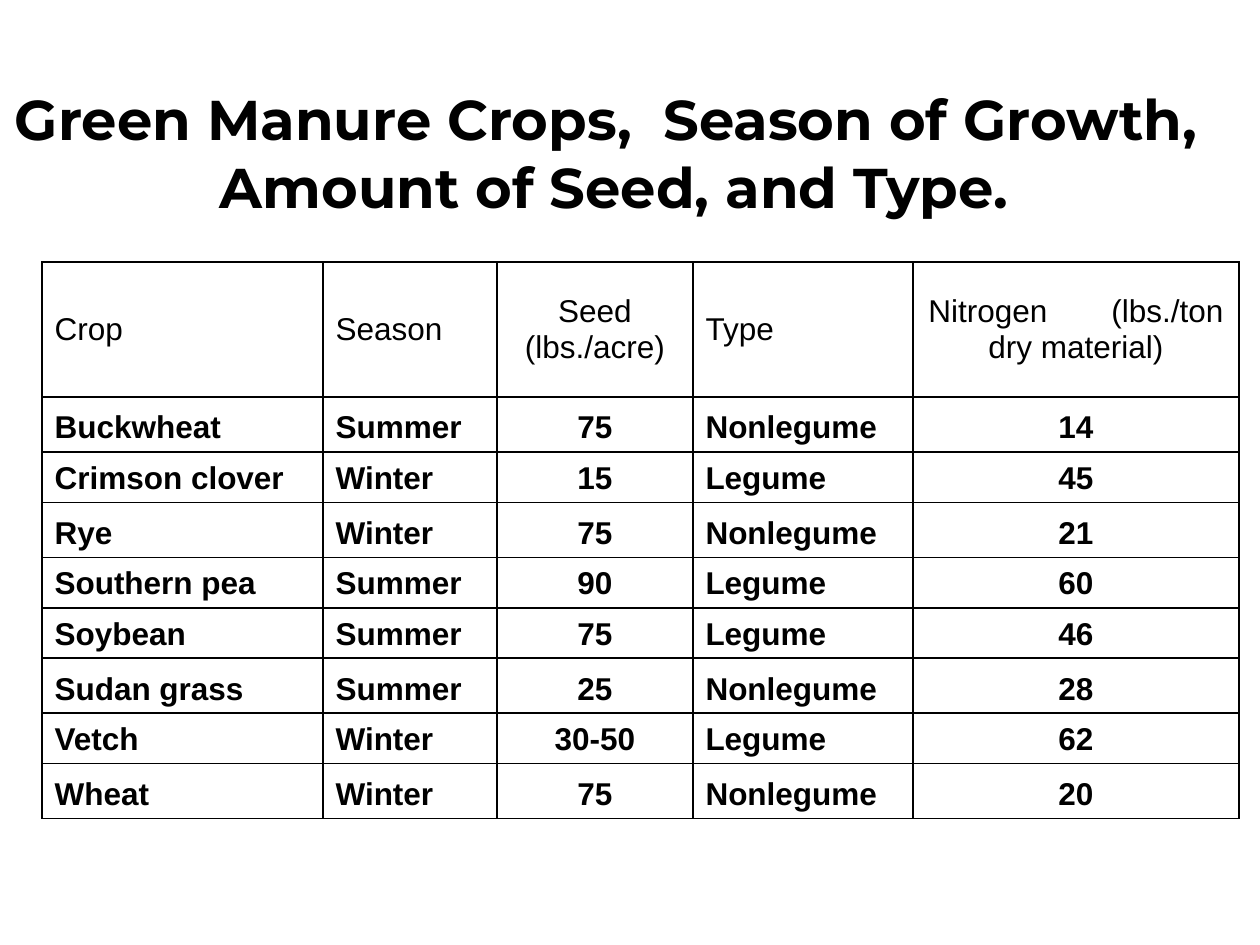
from dataclasses import dataclass

from lxml import etree
from pptx import Presentation
from pptx import util as u
from pptx.dml.color import RGBColor
from pptx.enum import text
from pptx.oxml.ns import qn

PX = 914400 // 126  # EMU in one px
BLACK = RGBColor(0x00, 0x00, 0x00)
WHITE = RGBColor(0xFF, 0xFF, 0xFF)
LEFT, CENTER = text.PP_ALIGN.LEFT, text.PP_ALIGN.CENTER
MIDDLE, BOTTOM = text.MSO_ANCHOR.MIDDLE, text.MSO_ANCHOR.BOTTOM

HEADER_HEIGHT = 135
ROW_HEIGHTS = {"Nonlegume": 55, "Legume": 49}
NITROGEN_TAB = 183


@dataclass(frozen=True)
class Column:
    heading: str
    width: int
    align: text.PP_ALIGN = LEFT


@dataclass(frozen=True)
class Crop:
    name: str
    season: str
    seed: str
    kind: str
    nitrogen: str

    def values(self) -> tuple[str, ...]:
        return self.name, self.season, self.seed, self.kind, self.nitrogen


COLUMNS = (
    Column("Crop", 281),
    Column("Season", 174),
    Column("Seed (lbs./acre)", 196, CENTER),
    Column("Type", 220),
    Column("Nitrogen\t(lbs./ton\ndry material)", 326, CENTER),
)
CROPS = (
    Crop("Buckwheat", "Summer", "75", "Nonlegume", "14"),
    Crop("Crimson clover", "Winter", "15", "Legume", "45"),
    Crop("Rye", "Winter", "75", "Nonlegume", "21"),
    Crop("Southern pea", "Summer", "90", "Legume", "60"),
    Crop("Soybean", "Summer", "75", "Legume", "46"),
    Crop("Sudan grass", "Summer", "25", "Nonlegume", "28"),
    Crop("Vetch", "Winter", "30-50", "Legume", "62"),
    Crop("Wheat", "Winter", "75", "Nonlegume", "20"),
)


def px(length: int) -> u.Emu:
    return u.Emu(length * PX)


def write(frame, content: str, *, size: int = 18, font: str = "Arial",
          bold: bool = False, align: text.PP_ALIGN = LEFT) -> None:
    """Fill a frame, one paragraph a line; a line with a tab starts at the left."""
    frame.word_wrap = True
    for number, line in enumerate(content.split("\n")):
        para = frame.paragraphs[0] if number == 0 else frame.add_paragraph()
        para.alignment = align
        if "\t" in line:
            para.alignment = LEFT
            props = para._p.get_or_add_pPr()
            props.set("marL", str(px(3)))
            stops = etree.SubElement(props, qn("a:tabLst"))
            etree.SubElement(stops, qn("a:tab"), pos=str(px(NITROGEN_TAB)), algn="l")
        span = para.add_run()
        span.text = line
        span.font.size = u.Pt(size)
        span.font.name = font
        span.font.bold = bold
        span.font.color.rgb = BLACK


def style_cell(cell, anchor: text.MSO_ANCHOR) -> None:
    """Give a cell black 1 pt borders and a white fill."""
    cell.vertical_anchor = anchor
    props = cell._tc.get_or_add_tcPr()
    for side in ("lnL", "lnR", "lnT", "lnB"):
        border = etree.SubElement(props, qn(f"a:{side}"), w=str(u.Pt(1)))
        fill = etree.SubElement(border, qn("a:solidFill"))
        etree.SubElement(fill, qn("a:srgbClr"), val=str(BLACK))
    cell.fill.solid()
    cell.fill.fore_color.rgb = WHITE


def add_title(page) -> None:
    box = page.shapes.add_textbox(px(0), px(105), px(1229), px(94))
    box.text_frame.vertical_anchor = MIDDLE
    write(box.text_frame,
          "Green Manure Crops,  Season of Growth,  Amount of Seed, and Type.",
          size=32, font="Montserrat", bold=True, align=CENTER)


def add_crop_table(page) -> None:
    heights = [HEADER_HEIGHT] + [ROW_HEIGHTS[crop.kind] for crop in CROPS]
    width = sum(column.width for column in COLUMNS)
    table = page.shapes.add_table(len(heights), len(COLUMNS), px(42), px(262),
                                  px(width), px(sum(heights))).table
    for column, spec in zip(table.columns, COLUMNS):
        column.width = px(spec.width)
    for row, height in zip(table.rows, heights):
        row.height = px(height)

    # Headings first, then one row per crop
    rows = [tuple(column.heading for column in COLUMNS)]
    rows += [crop.values() for crop in CROPS]
    for r, values in enumerate(rows):
        for c, value in enumerate(values):
            cell = table.cell(r, c)
            write(cell.text_frame, value, bold=r > 0, align=COLUMNS[c].align)
            style_cell(cell, BOTTOM if r else MIDDLE)


def main() -> None:
    deck = Presentation()
    deck.slide_width, deck.slide_height = px(1260), px(945)
    page = deck.slides.add_slide(deck.slide_layouts[6])
    add_title(page)
    add_crop_table(page)
    deck.save("out.pptx")


if __name__ == "__main__":
    main()
